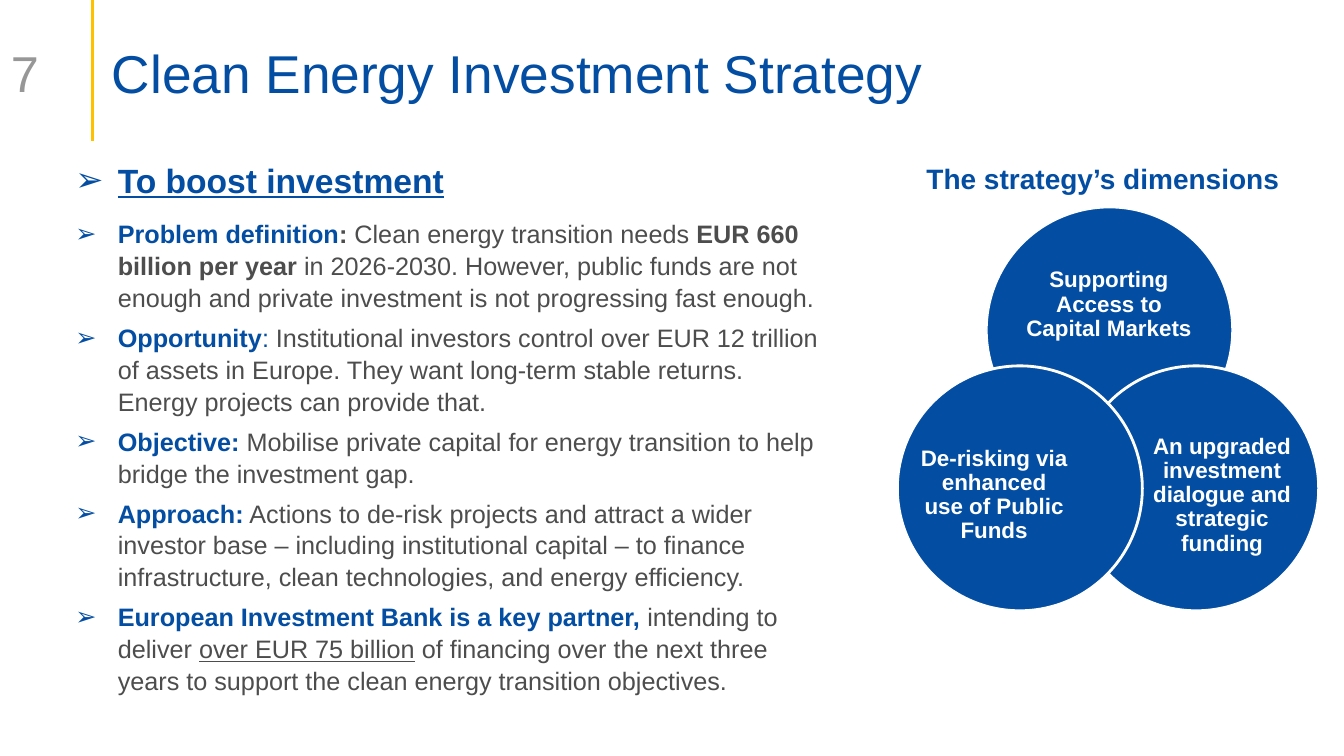
from lxml import etree
from pptx import Presentation
from pptx import util as u
from pptx.dml.color import RGBColor
from pptx.enum import shapes, text
from pptx.oxml.ns import qn

WIDTH, HEIGHT = u.Inches(13.33), u.Inches(7.5)
COLORS = {"blue": "034EA2", "body": "4D4D4D", "number": "979797",
          "rule": "FFC000", "white": "FFFFFF"}
DIAMETER = 2.43 / 13.33 * 100
INSETS = (0.1, 0.05, 0.1, 0.05)

KEY = {"color": "blue", "bold": True}
HEADING = [("To boost investment", {**KEY, "size": 24, "underline": True})]
POINTS = [
    [("Problem definition", KEY), (": ", {"bold": True}),
     ("Clean energy transition needs ", {}),
     ("EUR 660 billion per year ", {"bold": True}),
     ("in 2026-2030. However, public funds are not enough and private "
      "investment is not progressing fast enough.", {})],
    [("Opportunity", KEY), (":", {"color": "blue"}),
     (" Institutional investors control over EUR 12 trillion of assets in "
      "Europe. They want long-term stable returns. Energy projects can "
      "provide that.", {})],
    [("Objective:", KEY),
     (" Mobilise private capital for energy transition to help bridge the "
      "investment gap.", {})],
    [("Approach:", KEY),
     (" Actions to de-risk projects and attract a wider investor base – "
      "including institutional capital – to finance infrastructure, clean "
      "technologies, and energy efficiency.", {})],
    [("European Investment Bank is a key partner, ", KEY),
     ("intending to deliver ", {}),
     ("over EUR 75 billion", {"underline": True}),
     (" of financing over the next three years to support the clean energy "
      "transition objectives.", {})],
]
DIMENSIONS = [
    ("Supporting Access to Capital Markets",
     (73.44, 27.47), 1, (75.84, 33.07, 13.35, 14.53)),
    ("An upgraded investment dialogue and strategic funding",
     (79.89, 48.4), 2, (85.45, 56.67, 10.95, 17.73)),
    ("De-risking via enhanced use of Public Funds",
     (66.77, 48.4), 2, (68.49, 56.67, 10.95, 17.73)),
]


def across(share):
    """Return a percentage of the slide's width."""
    return u.Emu(round(WIDTH * share / 100))


def down(share):
    """Return a percentage of the slide's height."""
    return u.Emu(round(HEIGHT * share / 100))


def rgb(name):
    """Return the named colour."""
    return RGBColor.from_string(COLORS[name])


def write(paragraph, words, size=18, color="body", bold=False, underline=False):
    """Append a formatted run to a paragraph."""
    run = paragraph.add_run()
    run.text = words
    font = run.font
    font.name, font.size = "Arial", u.Pt(size)
    font.bold, font.underline = bold, underline
    font.color.rgb = rgb(color)


def add_box(slide, area, insets=INSETS, anchor=text.MSO_ANCHOR.TOP):
    """Add a wrapping text box and return its text frame."""
    left, top, width, height = area
    frame = slide.shapes.add_textbox(
        across(left), down(top), across(width), down(height)).text_frame
    frame.word_wrap = True
    frame.vertical_anchor = anchor
    (frame.margin_left, frame.margin_top,
     frame.margin_right, frame.margin_bottom) = map(u.Inches, insets)
    return frame


def add_label(slide, words, area, insets=INSETS, anchor=text.MSO_ANCHOR.TOP,
              align=text.PP_ALIGN.LEFT, spacing=1.0, **style):
    """Add a text box with one paragraph in one format."""
    paragraph = add_box(slide, area, insets, anchor).paragraphs[0]
    paragraph.alignment = align
    paragraph.line_spacing = spacing
    write(paragraph, words, **style)


def add_bullet(paragraph):
    """Give a paragraph a hanging blue arrow bullet."""
    properties = paragraph._p.get_or_add_pPr()
    properties.set("marL", str(u.Inches(0.5)))
    properties.set("indent", str(u.Inches(-0.42)))
    color = etree.SubElement(properties, qn("a:buClr"))
    etree.SubElement(color, qn("a:srgbClr"), val=COLORS["blue"])
    etree.SubElement(properties, qn("a:buFont"), typeface="Arial")
    etree.SubElement(properties, qn("a:buChar"), char="➢")


def add_points(slide, area):
    """Add the heading and the bulleted points."""
    frame = add_box(slide, area)
    for index, runs in enumerate([HEADING, *POINTS]):
        paragraph = frame.add_paragraph() if index else frame.paragraphs[0]
        add_bullet(paragraph)
        paragraph.line_spacing = 1.05
        paragraph.space_after = u.Pt(6 if index else 12)
        for words, style in runs:
            write(paragraph, words, **style)


def add_rule(slide, x, bottom):
    """Add the vertical rule beside the title."""
    rule = slide.shapes.add_connector(
        shapes.MSO_CONNECTOR.STRAIGHT, across(x), 0, across(x), down(bottom))
    rule.line.color.rgb = rgb("rule")
    rule.line.width = u.Pt(2.25)
    etree.SubElement(rule._element.spPr, qn("a:effectLst"))


def add_circle(slide, left, top, outline):
    """Add a blue circle with a white outline."""
    circle = slide.shapes.add_shape(
        shapes.MSO_SHAPE.OVAL, across(left), down(top),
        across(DIAMETER), across(DIAMETER))
    circle.shadow.inherit = False
    circle.fill.solid()
    circle.fill.fore_color.rgb = rgb("blue")
    circle.line.color.rgb = rgb("white")
    circle.line.width = u.Pt(outline)


def main():
    """Build and save the slide."""
    presentation = Presentation()
    presentation.slide_width, presentation.slide_height = WIDTH, HEIGHT
    slide = presentation.slides.add_slide(presentation.slide_layouts[6])
    add_rule(slide, 6.9, 18.67)
    add_points(slide, (4.28, 20.27, 57.99, 73.07))
    for words, (left, top), outline, area in DIMENSIONS:
        add_circle(slide, left, top, outline)
        add_label(slide, words, area, insets=(0, 0, 0, 0),
                  anchor=text.MSO_ANCHOR.MIDDLE, align=text.PP_ALIGN.CENTER,
                  spacing=0.9, size=16, color="white", bold=True)
    add_label(slide, "The strategy’s dimensions", (68.19, 20.67, 29.48, 5.87),
              size=20, color="blue", bold=True)
    add_label(slide, "Clean Energy Investment Strategy",
              (7.58, 5.33, 86.27, 8.53), insets=(0.1, 0.05, 0.1, 0),
              anchor=text.MSO_ANCHOR.BOTTOM, spacing=0.9, size=38, color="blue")
    add_label(slide, "7", (0.08, 6.93, 6.68, 5.33),
              anchor=text.MSO_ANCHOR.MIDDLE, size=36, color="number")
    presentation.save("out.pptx")


if __name__ == "__main__":
    main()
